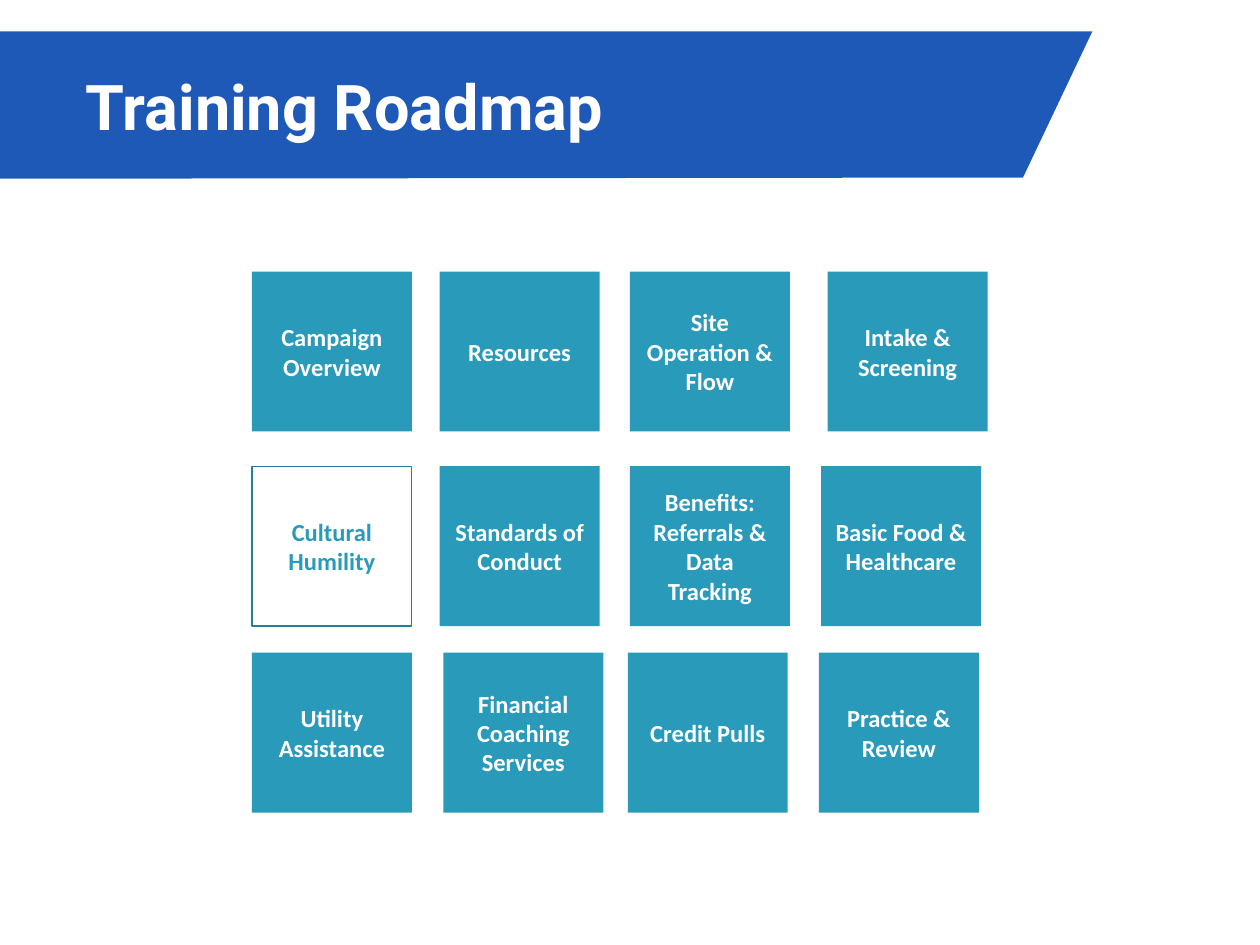
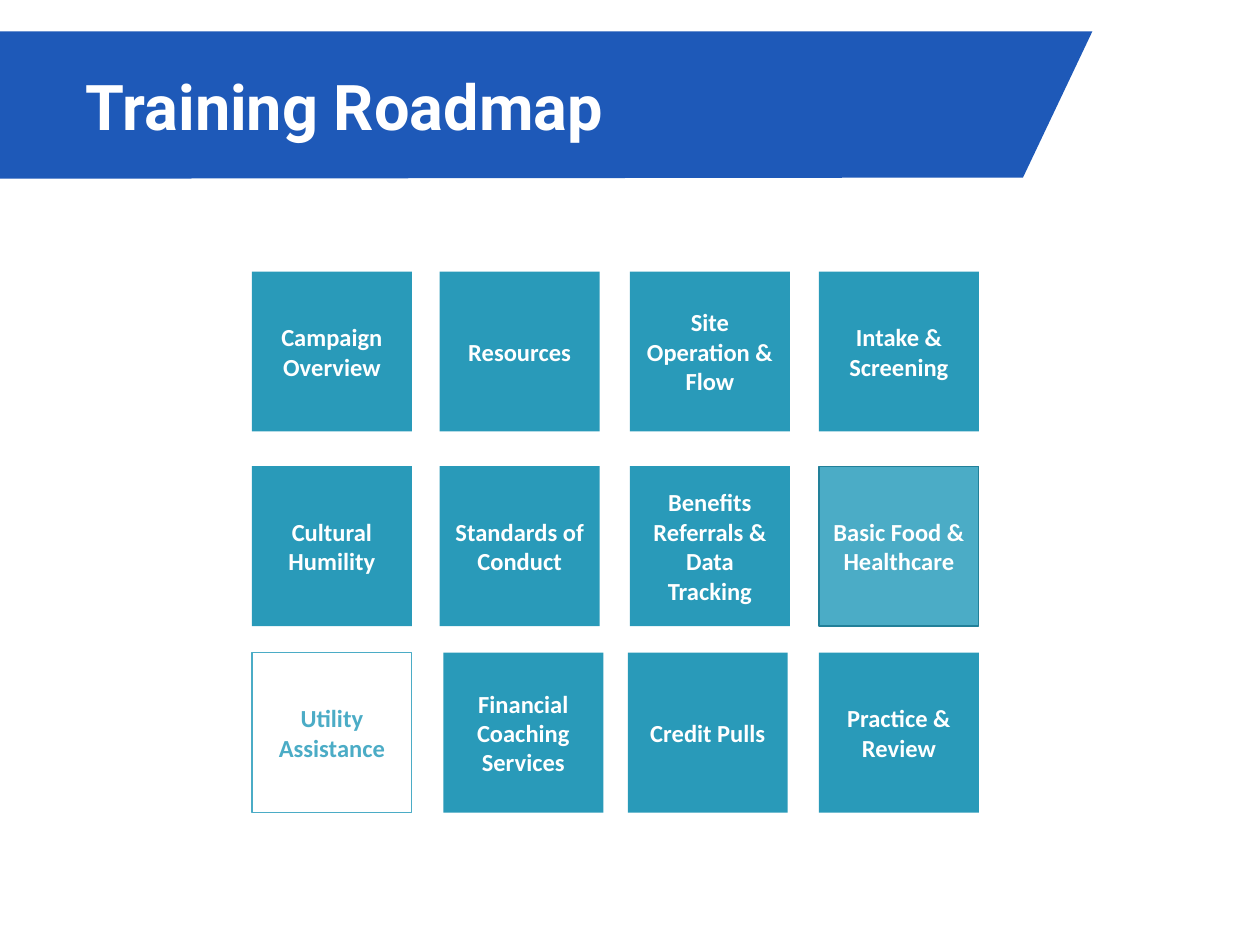
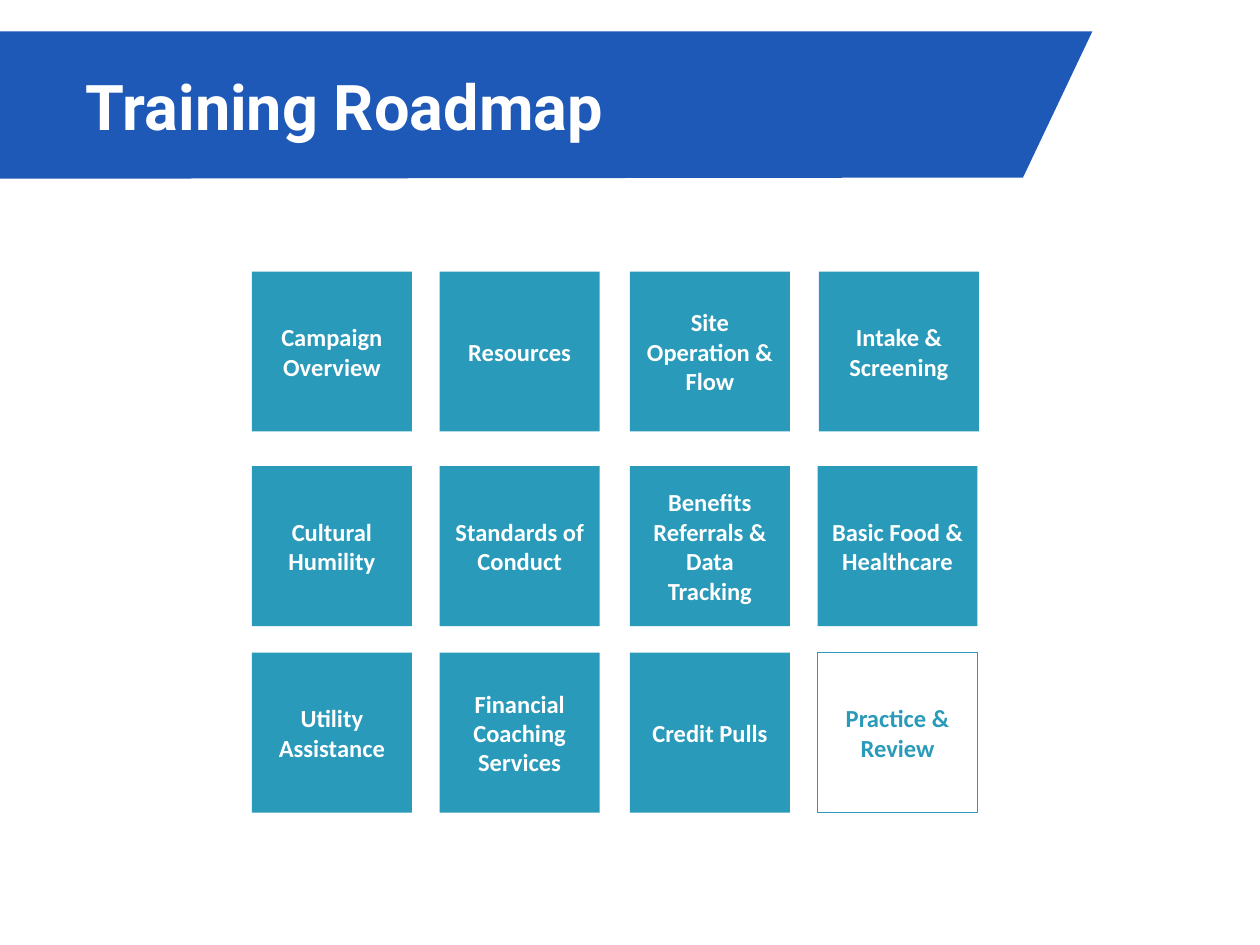
from pptx import Presentation
from pptx.dml.color import RGBColor
from pptx.enum.shapes import MSO_SHAPE
from pptx.enum.text import MSO_ANCHOR, PP_ALIGN
from pptx.util import Pt

BAND_BLUE = RGBColor(0x1E, 0x59, 0xB8)
TEAL = RGBColor(0x29, 0x9A, 0xB9)
LIGHT_TEAL = RGBColor(0x4B, 0xAC, 0xC6)
DARK_TEAL = RGBColor(0x22, 0x80, 0x99)
WHITE = RGBColor(0xFF, 0xFF, 0xFF)

BAND_OUTLINE = [(-30.2, 102.2), (-7.2, 18), (624.2, 18), (584.6, 101.5)]
TITLE_INDENT = Pt(72)

TILE_SIZE = 91.4
COLUMN_LEFTS = [144, 251.3, 360, 468]
ROW_TOPS = [155.2, 266.4, 373]
TOPICS = [
    ["Campaign Overview", "Resources", "Site Operation & Flow", "Intake & Screening"],
    ["Cultural Humility", "Standards of Conduct", "Benefits Referrals & Data Tracking",
     "Basic Food & Healthcare"],
    ["Utility Assistance", "Financial Coaching Services", "Credit Pulls", "Practice & Review"],
]

# Tile looks: fill, outline, text
DEFAULT_LOOK = (TEAL, None, WHITE)

# Each slide: looks of highlighted topics, lefts of shifted topics, reworded topics
ROADMAPS = [
    (
        {"Cultural Humility": (None, DARK_TEAL, TEAL)},
        {"Intake & Screening": 473, "Basic Food & Healthcare": 469.2,
         "Financial Coaching Services": 253.4, "Credit Pulls": 358.8},
        {"Benefits Referrals & Data Tracking": "Benefits: Referrals & Data Tracking"},
    ),
    (
        {"Utility Assistance": (None, LIGHT_TEAL, LIGHT_TEAL),
         "Basic Food & Healthcare": (LIGHT_TEAL, DARK_TEAL, WHITE)},
        {"Financial Coaching Services": 253.4, "Credit Pulls": 358.8},
        {},
    ),
    (
        {"Practice & Review": (WHITE, TEAL, TEAL)},
        {"Basic Food & Healthcare": 467.2, "Practice & Review": 467.2},
        {},
    ),
]


def paint(shape, fill, outline):
    shape.shadow.inherit = False
    if fill is None:
        shape.fill.background()
    else:
        shape.fill.solid()
        shape.fill.fore_color.rgb = fill
    if outline is None:
        shape.line.fill.background()
    else:
        shape.line.color.rgb = outline
        shape.line.width = Pt(0.75)


def write(shape, text, font_name, size, color, alignment):
    frame = shape.text_frame
    frame.word_wrap = True
    frame.vertical_anchor = MSO_ANCHOR.MIDDLE
    paragraph = frame.paragraphs[0]
    paragraph.alignment = alignment
    run = paragraph.add_run()
    run.text = text
    run.font.name = font_name
    run.font.size = Pt(size)
    run.font.bold = True
    run.font.color.rgb = color
    return paragraph


deck = Presentation()
deck.slide_width, deck.slide_height = Pt(720), Pt(540)
blank = deck.slide_layouts[6]

for looks, shifted_lefts, rewordings in ROADMAPS:
    shapes = deck.slides.add_slide(blank).shapes

    corners = [(Pt(x), Pt(y)) for x, y in BAND_OUTLINE]
    outline_builder = shapes.build_freeform(*corners[0])
    outline_builder.add_line_segments(corners[1:], close=True)
    band = outline_builder.convert_to_shape()
    paint(band, BAND_BLUE, None)
    title = write(band, "Training Roadmap", "Roboto", 36, WHITE, PP_ALIGN.LEFT)
    title.level = 2
    title_properties = title._p.get_or_add_pPr()
    title_properties.set("marL", str(TITLE_INDENT))
    title_properties.set("indent", "0")

    for top, row in zip(ROW_TOPS, TOPICS):
        for column_left, topic in zip(COLUMN_LEFTS, row):
            left = shifted_lefts.get(topic, column_left)
            fill, outline, text_color = looks.get(topic, DEFAULT_LOOK)
            tile = shapes.add_shape(MSO_SHAPE.RECTANGLE, Pt(left), Pt(top),
                                    Pt(TILE_SIZE), Pt(TILE_SIZE))
            paint(tile, fill, outline)
            write(tile, rewordings.get(topic, topic), "Calibri", 14, text_color,
                  PP_ALIGN.CENTER)

deck.save("out.pptx")
